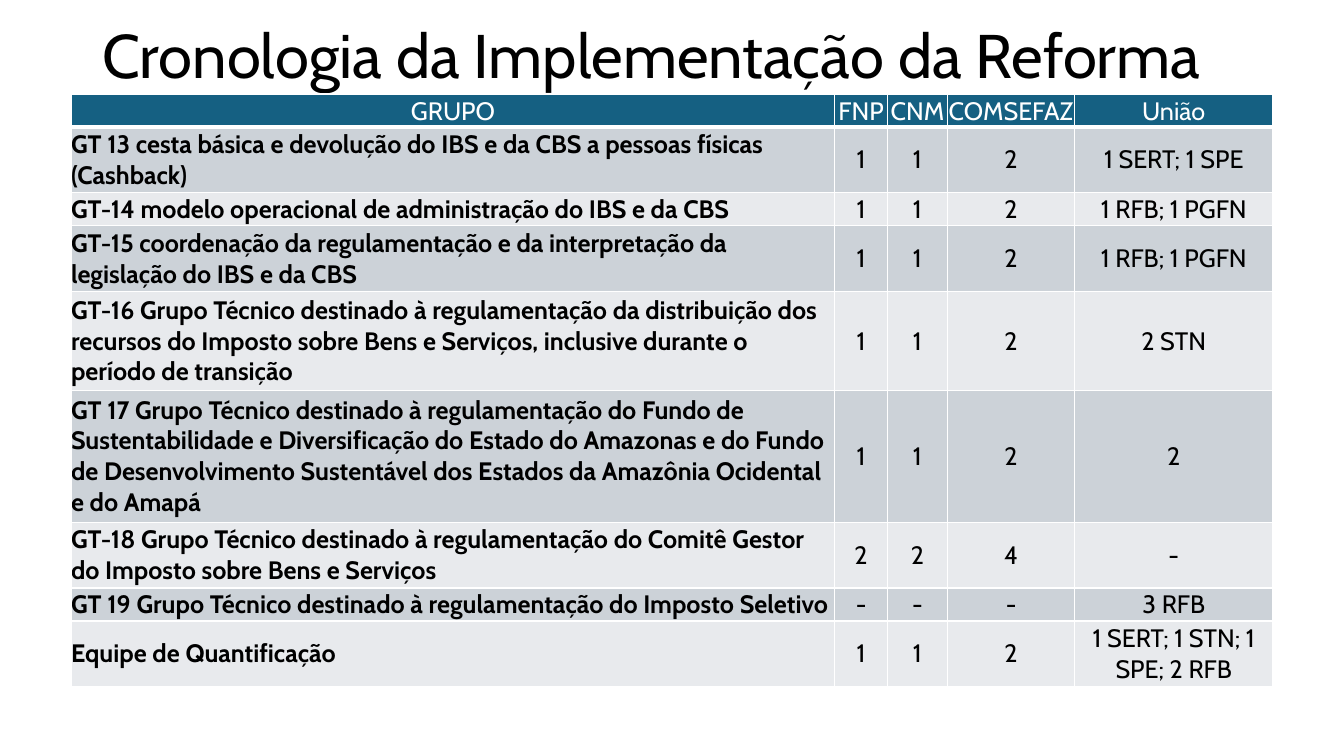
"""Build the slide listing the technical groups of the tax reform and their members."""
from lxml.etree import SubElement
from pptx import Presentation
from pptx.dml.color import RGBColor
from pptx.enum.text import MSO_ANCHOR, PP_ALIGN
from pptx.oxml.ns import qn
from pptx.util import Cm, Pt

BLACK = RGBColor(0x00, 0x00, 0x00)
WHITE = RGBColor(0xFF, 0xFF, 0xFF)
HEADER_BLUE = RGBColor(0x15, 0x60, 0x82)
DARK_BAND = RGBColor(0xCC, 0xD2, 0xD8)
LIGHT_BAND = RGBColor(0xE8, 0xEA, 0xED)

COLUMN_WIDTHS = [19.25, 1.32, 1.52, 3.2, 5]
LINE_HEIGHT = 0.83
ROWS = [
    (1, ["GRUPO", "FNP", "CNM", "COMSEFAZ", "União"]),
    (2, ["GT 13 cesta básica e devolução do IBS e da CBS a pessoas físicas (Cashback)",
         "1", "1", "2", "1 SERT; 1 SPE"]),
    (1, ["GT-14 modelo operacional de administração do IBS e da CBS",
         "1", "1", "2", "1 RFB; 1 PGFN"]),
    (2, ["GT-15 coordenação da regulamentação e da interpretação da legislação do IBS e da CBS",
         "1", "1", "2", "1 RFB; 1 PGFN"]),
    (3, ["GT-16 Grupo Técnico destinado à regulamentação da distribuição dos recursos do "
         "Imposto sobre Bens e Serviços, inclusive durante o período de transição",
         "1", "1", "2", "2 STN"]),
    (4, ["GT 17 Grupo Técnico destinado à regulamentação do Fundo de Sustentabilidade e "
         "Diversificação do Estado do Amazonas e do Fundo de Desenvolvimento Sustentável "
         "dos Estados da Amazônia Ocidental e do Amapá",
         "1", "1", "2", "2"]),
    (2, ["GT-18 Grupo Técnico destinado à regulamentação do Comitê Gestor do Imposto "
         "sobre Bens e Serviços",
         "2", "2", "4", "-"]),
    (1, ["GT 19 Grupo Técnico destinado à regulamentação do Imposto Seletivo",
         "-", "-", "-", "3 RFB"]),
    (2, ["Equipe de Quantificação", "1", "1", "2", "1 SERT; 1 STN; 1 SPE; 2 RFB"]),
]


def write_text(paragraph, text, color, **font_format):
    paragraph.text = text
    font = paragraph.runs[0].font
    for name, value in {"name": "Cabin", **font_format}.items():
        setattr(font, name, value)
    font.color.rgb = color


def add_border(cell, side, width):
    properties = cell._tc.get_or_add_tcPr()
    line = SubElement(properties, qn(f"a:ln{side}"), w=str(Pt(width)))
    fill = SubElement(line, qn("a:solidFill"))
    SubElement(fill, qn("a:srgbClr"), val=str(WHITE))


presentation = Presentation()
presentation.slide_width = Cm(33.87)
presentation.slide_height = Cm(19.05)
slide = presentation.slides.add_slide(presentation.slide_layouts[6])

title = slide.shapes.add_textbox(Cm(2.33), Cm(0.38), Cm(29.21), Cm(2.2))
title.text_frame.word_wrap = True
title.text_frame.vertical_anchor = MSO_ANCHOR.MIDDLE
title_paragraph = title.text_frame.paragraphs[0]
title_paragraph.line_spacing = 0.9
write_text(title_paragraph, "Cronologia da Implementação da Reforma", BLACK, size=Pt(44))

table_height = LINE_HEIGHT * sum(lines for lines, _ in ROWS)
table = slide.shapes.add_table(
    len(ROWS), len(COLUMN_WIDTHS), Cm(1.79), Cm(2.37),
    Cm(sum(COLUMN_WIDTHS)), Cm(table_height)).table
for column, width in zip(table.columns, COLUMN_WIDTHS):
    column.width = Cm(width)

for row_index, (lines, texts) in enumerate(ROWS):
    table.rows[row_index].height = Cm(LINE_HEIGHT * lines)
    is_header = row_index == 0
    band = DARK_BAND if row_index % 2 else LIGHT_BAND
    for column_index, text in enumerate(texts):
        is_group = column_index == 0 and not is_header
        cell = table.cell(row_index, column_index)
        cell_format = {
            "margin_left": 0, "margin_right": 0, "margin_top": 0, "margin_bottom": 0,
            "vertical_anchor": MSO_ANCHOR.BOTTOM if is_header else MSO_ANCHOR.MIDDLE,
        }
        for name, value in cell_format.items():
            setattr(cell, name, value)
        for side in "LRTB":
            add_border(cell, side, 3 if is_header and side == "B" else 1)
        cell.fill.solid()
        cell.fill.fore_color.rgb = HEADER_BLUE if is_header else band
        paragraph = cell.text_frame.paragraphs[0]
        paragraph.alignment = PP_ALIGN.LEFT if is_group else PP_ALIGN.CENTER
        write_text(paragraph, text, WHITE if is_header else BLACK, size=Pt(18), bold=is_group)

presentation.save("out.pptx")
